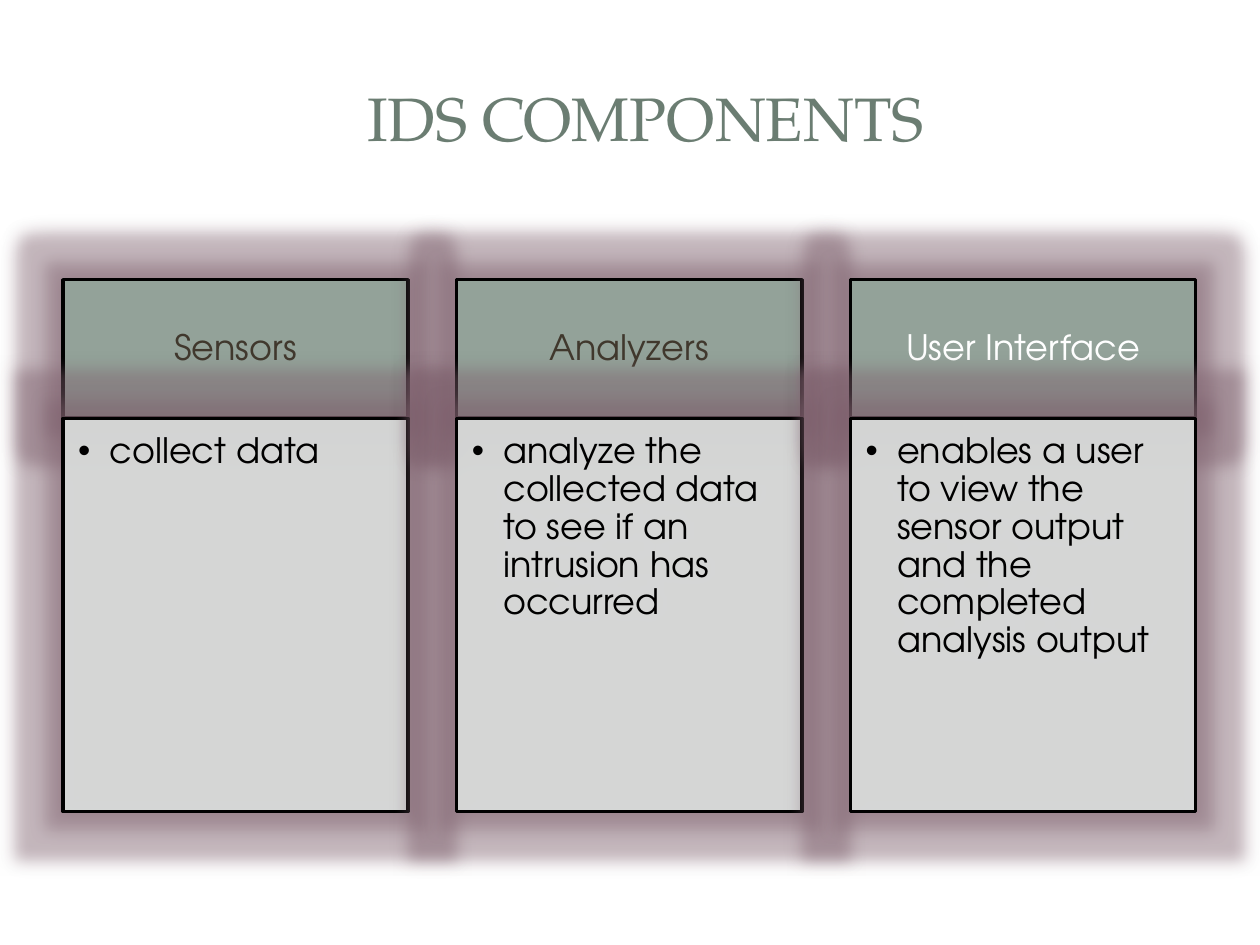
from lxml import etree
from pptx import Presentation
from pptx.dml.color import RGBColor
from pptx.enum.shapes import MSO_SHAPE
from pptx.enum.text import MSO_ANCHOR, PP_ALIGN
from pptx.oxml import parse_xml
from pptx.oxml.ns import nsdecls, qn
from pptx.util import Inches, Pt

RECT = MSO_SHAPE.RECTANGLE
TOP, MIDDLE = MSO_ANCHOR.TOP, MSO_ANCHOR.MIDDLE
LEFT, CENTER = PP_ALIGN.LEFT, PP_ALIGN.CENTER


class Theme:
    serif, sans = "TeX Gyre Pagella", "TeX Gyre Adventor"
    title_size, text_size = 35, 20
    title, dark, light, black = "6B7D72", "40382D", "FFFFFF", "000000"
    head, body, glow = "93A299", "DCE0DE", "7D5F6C"


def write(shape, text, font, size, color, align, anchor, insets):
    frame = shape.text_frame
    frame.word_wrap = True
    frame.vertical_anchor = anchor
    (frame.margin_left, frame.margin_top,
     frame.margin_right, frame.margin_bottom) = map(Inches, insets)
    para = frame.paragraphs[0]
    para.alignment = align
    run = para.add_run()
    run.text = text
    run.font.name = font
    run.font.size = Pt(size)
    run.font.color.rgb = RGBColor.from_string(color)
    return para


def add_box(left, top, width, height, fill):
    """Add an outlined rectangle with a soft glow around it."""
    box = slide.shapes.add_shape(
        RECT, Inches(left), Inches(top), Inches(width), Inches(height))
    box.fill.solid()
    box.fill.fore_color.rgb = RGBColor.from_string(fill)
    box.line.color.rgb = RGBColor.from_string(Theme.black)
    box.line.width = Pt(2)
    tint = f'<a:srgbClr val="{Theme.glow}"><a:alpha val="40000"/></a:srgbClr>'
    box._element.spPr.append(parse_xml(
        f'<a:effectLst {nsdecls("a")}>'
        f'<a:glow rad="{Inches(0.25)}">{tint}</a:glow>'
        f'<a:outerShdw blurRad="{Inches(0.12)}" dist="0">{tint}</a:outerShdw>'
        '</a:effectLst>'))
    return box


prs = Presentation()
prs.slide_width, prs.slide_height = Inches(10), Inches(7.5)
slide = prs.slides.add_slide(prs.slide_layouts[6])

title = slide.shapes.add_textbox(
    Inches(0.5), Inches(0.3), Inches(9.25), Inches(1.25))
write(title, "IDS COMPONENTS", Theme.serif, Theme.title_size, Theme.title,
      CENTER, MIDDLE, (0.1, 0.05, 0.1, 0.05))

parts = [
    ("Sensors", Theme.dark, "collect data"),
    ("Analyzers", Theme.dark,
     "analyze the collected data to see if an intrusion has occurred"),
    ("User Interface", Theme.light,
     "enables a user to view the sensor output and the completed "
     "analysis output"),
]
left, top, width, pitch = 0.5, 2.22, 2.74, 3.125
head_height, body_height = 1.1, 3.12

for i, (name, color, task) in enumerate(parts):
    x = left + i * pitch
    head = add_box(x, top, width, head_height, Theme.head)
    para = write(head, name, Theme.sans, Theme.text_size, color,
                 CENTER, MIDDLE, (0.16, 0.09, 0.16, 0.09))
    para.line_spacing = 0.9

    body = add_box(x, top + head_height, width, body_height, Theme.body)
    shade = body._element.spPr.find(qn("a:solidFill"))[0]
    etree.SubElement(shade, qn("a:alpha"), val="90000")
    para = write(body, task, Theme.sans, Theme.text_size, Theme.black,
                 LEFT, TOP, (0.12, 0.12, 0.16, 0.17))
    para.line_spacing = 0.9
    props = para._p.get_or_add_pPr()
    props.set("marL", str(Inches(0.25)))
    props.set("indent", str(Inches(-0.25)))
    etree.SubElement(props, qn("a:buFont"), typeface="Arial")
    etree.SubElement(props, qn("a:buChar"), char="•")

prs.save("out.pptx")
